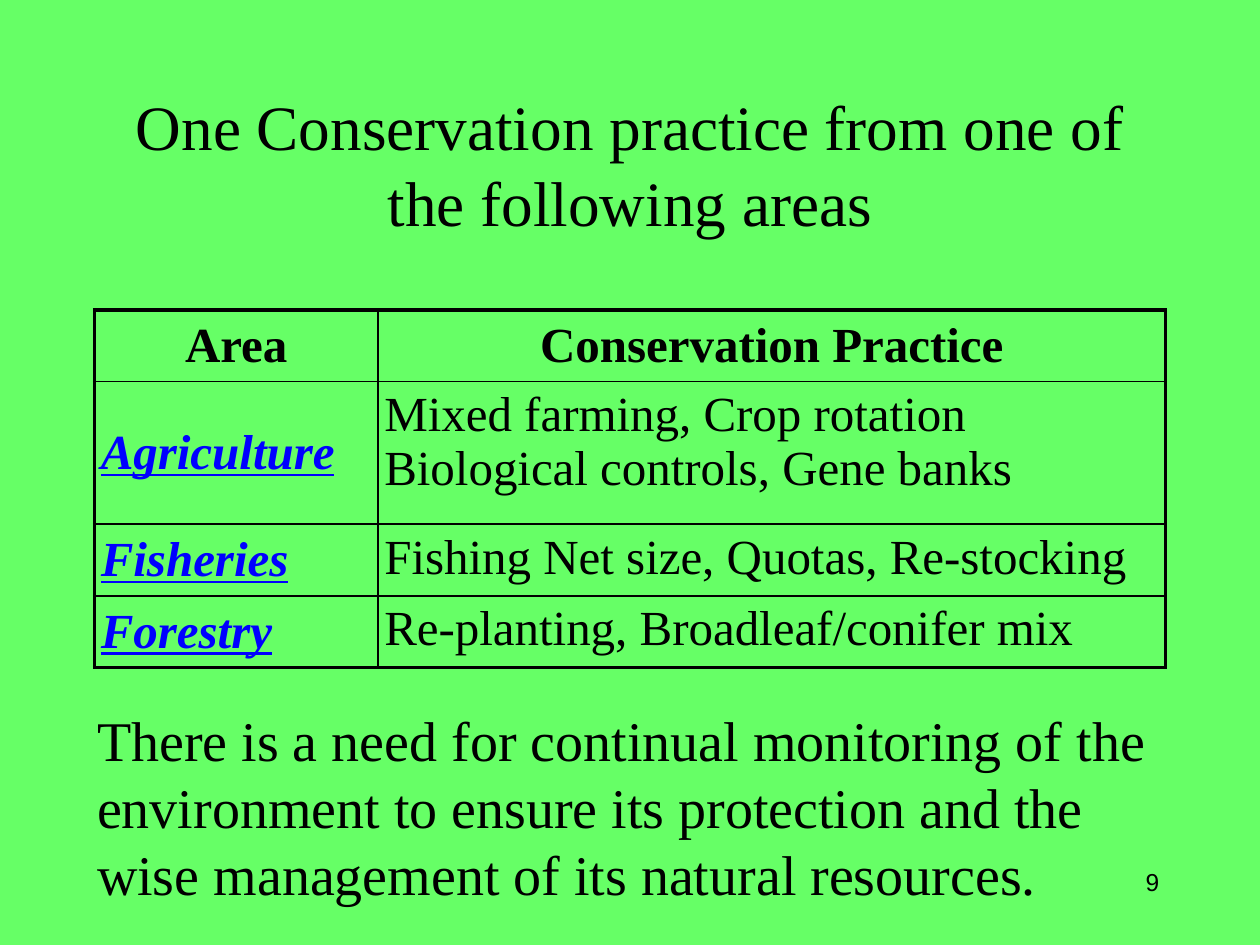
from lxml.etree import SubElement
from pptx import Presentation
from pptx.dml.color import RGBColor
from pptx.enum.text import MSO_ANCHOR, MSO_AUTO_SIZE, PP_ALIGN
from pptx.oxml.ns import qn
from pptx.util import Inches, Pt

GREEN = RGBColor(0x66, 0xFF, 0x66)
BLACK = RGBColor(0x00, 0x00, 0x00)
BLUE = RGBColor(0x00, 0x00, 0xFF)

PLAIN = {}
HEADER = {"bold": True}
AREA = {"bold": True, "italic": True, "underline": True}

PRACTICES = [
    ("Agriculture", ["Mixed farming, Crop rotation", "Biological controls, Gene banks"]),
    ("Fisheries", ["Fishing Net size, Quotas, Re-stocking"]),
    ("Forestry", ["Re-planting, Broadleaf/conifer mix"]),
]
COLUMN_WIDTHS = [2.25, 6.25]
ROW_HEIGHTS = [0.57, 1.13, 0.57, 0.57]
OUTER_LINE, INNER_LINE = Pt(2.25), Pt(1)


class SlideBuilder:
    font_name = "Times New Roman"
    margin = Inches(0.05)

    def __init__(self, presentation):
        self.slide = presentation.slides.add_slide(presentation.slide_layouts[6])
        fill = self.slide.background.fill
        fill.solid()
        fill.fore_color.rgb = GREEN

    def set_margins(self, target):
        for side in ("left", "top", "right", "bottom"):
            setattr(target, f"margin_{side}", self.margin)

    def add_lines(self, frame, lines, size, alignment=PP_ALIGN.LEFT, color=BLACK,
                  styles=PLAIN, font_name=None, space_before=0):
        for index, line in enumerate(lines):
            paragraph = frame.paragraphs[0] if index == 0 else frame.add_paragraph()
            paragraph.alignment = alignment
            paragraph.space_before = Pt(space_before)
            run = paragraph.add_run()
            run.text = line
            run.font.color.rgb = color
            values = {"name": font_name or self.font_name, "size": Pt(size), **styles}
            for name, value in values.items():
                setattr(run.font, name, value)

    def text_box(self, box, text, size, anchor=MSO_ANCHOR.TOP, wrap=True,
                 auto_size=MSO_AUTO_SIZE.NONE, **text_format):
        shape = self.slide.shapes.add_textbox(*(Inches(length) for length in box))
        frame = shape.text_frame
        self.set_margins(frame)
        frame.word_wrap = wrap
        frame.auto_size = auto_size
        frame.vertical_anchor = anchor
        self.add_lines(frame, [text], size, **text_format)

    def cell_borders(self, cell, widths):
        """Draw the borders; widths are in the order left, right, top, bottom."""
        properties = cell._tc.get_or_add_tcPr()
        for side, width in zip("LRTB", widths):
            line = SubElement(properties, qn(f"a:ln{side}"), w=str(int(width)))
            fill = SubElement(line, qn("a:solidFill"))
            SubElement(fill, qn("a:srgbClr"), val=str(BLACK))

    def cell(self, cell, lines, widths, anchor=MSO_ANCHOR.MIDDLE, **text_format):
        self.set_margins(cell)
        cell.vertical_anchor = anchor
        self.cell_borders(cell, widths)
        cell.fill.background()
        self.add_lines(cell.text_frame, lines, 28, **text_format)

    def practice_table(self, left, top):
        rows, columns = len(ROW_HEIGHTS), len(COLUMN_WIDTHS)
        table = self.slide.shapes.add_table(
            rows, columns, Inches(left), Inches(top),
            Inches(sum(COLUMN_WIDTHS)), Inches(sum(ROW_HEIGHTS))).table
        table.first_row = table.horz_banding = False
        for column, width in zip(table.columns, COLUMN_WIDTHS):
            column.width = Inches(width)
        for row, height in zip(table.rows, ROW_HEIGHTS):
            row.height = Inches(height)

        def widths(row, column):
            edges = (column == 0, column == columns - 1, row == 0, row == rows - 1)
            return [OUTER_LINE if edge else INNER_LINE for edge in edges]

        for column, heading in enumerate(("Area", "Conservation Practice")):
            self.cell(table.cell(0, column), [heading], widths(0, column),
                      alignment=PP_ALIGN.CENTER, styles=HEADER)
        for row, (area, practices) in enumerate(PRACTICES, start=1):
            self.cell(table.cell(row, 0), [area], widths(row, 0), color=BLUE, styles=AREA)
            self.cell(table.cell(row, 1), practices, widths(row, 1), anchor=MSO_ANCHOR.TOP)


def main():
    presentation = Presentation()
    presentation.slide_width = Inches(10)
    presentation.slide_height = Inches(7.5)
    builder = SlideBuilder(presentation)
    builder.text_box((9.04, 6.83, 0.21, 0.31), "9", 14, wrap=False,
                     auto_size=MSO_AUTO_SIZE.SHAPE_TO_FIT_TEXT,
                     alignment=PP_ALIGN.RIGHT, font_name="Arial")
    builder.text_box((0.75, 0.67, 8.5, 1.25),
                     "One Conservation practice from one of the following areas", 36.1,
                     anchor=MSO_ANCHOR.MIDDLE, alignment=PP_ALIGN.CENTER)
    builder.practice_table(0.75, 2.46)
    builder.text_box((0.72, 5.55, 8.58, 1.62),
                     "There is a need for continual monitoring of the environment to ensure "
                     "its protection and the wise management of its natural resources.", 32,
                     auto_size=MSO_AUTO_SIZE.SHAPE_TO_FIT_TEXT, space_before=19)
    presentation.save("out.pptx")


if __name__ == "__main__":
    main()
